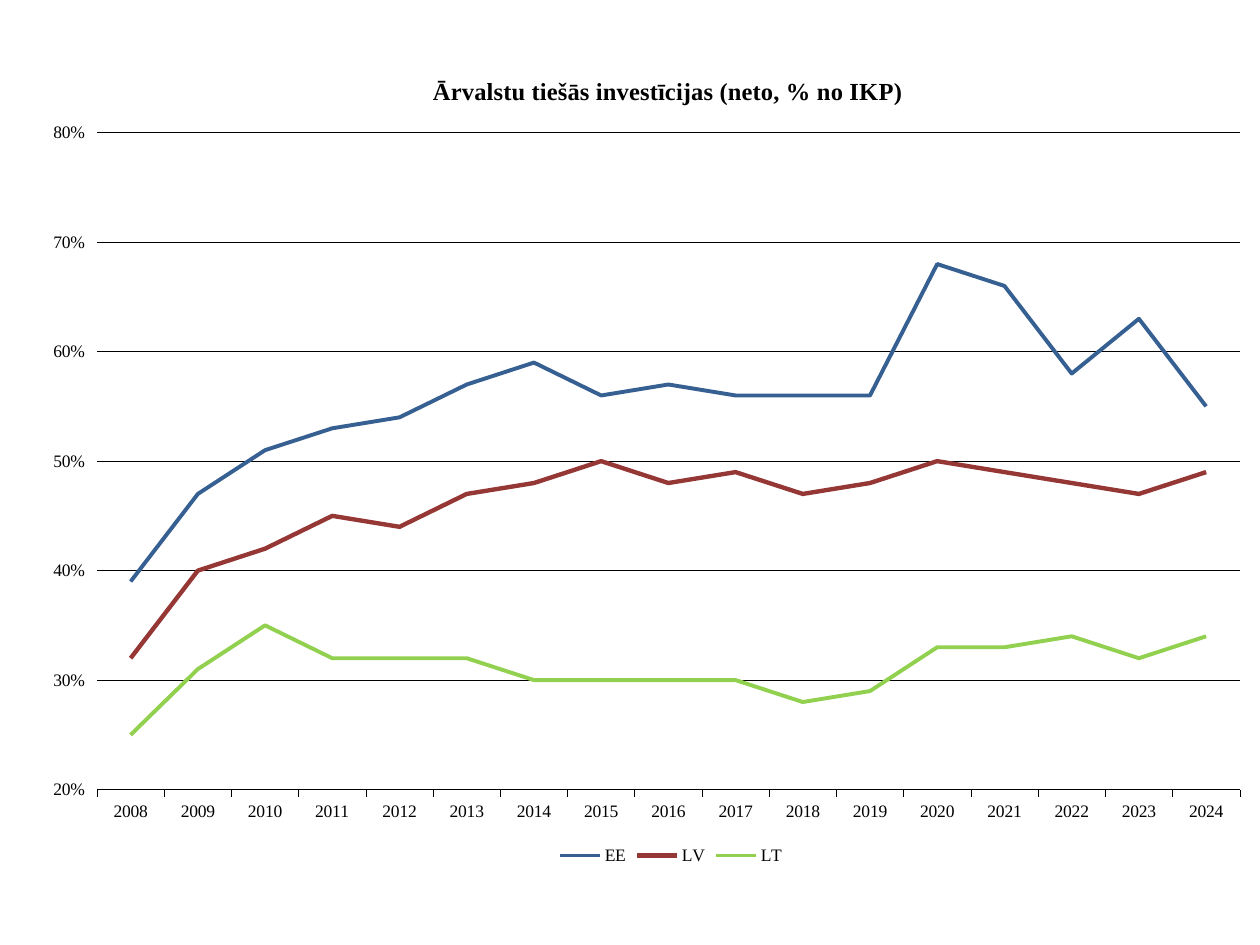
from dataclasses import dataclass

from pptx import Presentation
from pptx.chart.data import CategoryChartData
from pptx.dml.color import RGBColor
from pptx.enum.chart import (XL_CHART_TYPE, XL_LEGEND_POSITION, XL_MARKER_STYLE,
                             XL_TICK_LABEL_POSITION, XL_TICK_MARK)
from pptx.oxml import parse_xml
from pptx.oxml.ns import nsdecls, qn
from pptx.util import Pt

LINE = XL_CHART_TYPE.LINE
BOTTOM = XL_LEGEND_POSITION.BOTTOM
BARE = XL_MARKER_STYLE.NONE
LOW = XL_TICK_LABEL_POSITION.LOW
OUT = XL_TICK_MARK.OUTSIDE
NONE = XL_TICK_MARK.NONE


@dataclass(frozen=True)
class Theme:
    font: str = "Times New Roman"
    ink: str = "000000"
    blue: str = "376092"
    red: str = "953735"
    green: str = "92D050"
    body: int = 10
    head: int = 14
    hair: float = 0.25


theme = Theme()
PX = 914400 / 126
WIDE, HIGH = 1260, 945
LEFT, TOP, WIDTH, HEIGHT = [round(n * PX) for n in (0, 54, 1260, 837)]

YEARS = [str(year) for year in range(2008, 2025)]
LINES = [
    ("EE", theme.blue, 2.25, [0.39, 0.47, 0.51, 0.53, 0.54, 0.57, 0.59, 0.56, 0.57,
                              0.56, 0.56, 0.56, 0.68, 0.66, 0.58, 0.63, 0.55]),
    ("LV", theme.red, 2.5, [0.32, 0.40, 0.42, 0.45, 0.44, 0.47, 0.48, 0.50, 0.48,
                            0.49, 0.47, 0.48, 0.50, 0.49, 0.48, 0.47, 0.49]),
    ("LT", theme.green, 2.25, [0.25, 0.31, 0.35, 0.32, 0.32, 0.32, 0.30, 0.30, 0.30,
                               0.30, 0.28, 0.29, 0.33, 0.33, 0.34, 0.32, 0.34]),
]


def write(frame, text, size=theme.body, bold=False, color=theme.ink):
    run = frame.paragraphs[0].add_run()
    run.text = text
    run.font.name = theme.font
    run.font.size = Pt(size)
    run.font.bold = bold
    run.font.color.rgb = RGBColor.from_string(color)


def place(host, index, inner=False, **box):
    """Fix a chart part at shares of the chart area; index is the layout's child slot."""
    for old in host.findall(qn("c:layout")):
        host.remove(old)
    rows = '<c:layoutTarget val="inner"/>' if inner else ""
    rows += "".join(f'<c:{key}Mode val="edge"/>' for key in "xy")
    rows += "".join(f'<c:{key} val="{share}"/>' for key, share in box.items())
    host.insert(index, parse_xml(
        f'<c:layout {nsdecls("c")}><c:manualLayout>{rows}</c:manualLayout></c:layout>'))


deck = Presentation()
deck.slide_width = round(WIDE * PX)
deck.slide_height = round(HIGH * PX)
slide = deck.slides.add_slide(deck.slide_layouts[6])

# Chart and lines
data = CategoryChartData(number_format="0%")
data.categories = YEARS
for name, color, width, shares in LINES:
    data.add_series(name, shares)
chart = slide.shapes.add_chart(LINE, LEFT, TOP, WIDTH, HEIGHT, data).chart
chart.font.name = theme.font
chart.font.size = Pt(theme.body)
chart.font.color.rgb = RGBColor.from_string(theme.ink)

plot = chart.plots[0]
plot.vary_by_categories = False
for series, (name, color, width, shares) in zip(plot.series, LINES):
    series.smooth = False
    series.marker.style = BARE
    series.format.line.color.rgb = RGBColor.from_string(color)
    series.format.line.width = Pt(width)

# Axes
years, scale = chart.category_axis, chart.value_axis
for axis in (years, scale):
    axis.tick_label_position = LOW
    axis.major_tick_mark = OUT
    axis.minor_tick_mark = NONE
scale.minimum_scale, scale.maximum_scale, scale.major_unit = 0.2, 0.8, 0.1
scale.tick_labels.number_format = "0%"
scale.tick_labels.number_format_is_linked = False
scale.format.line.fill.background()
for rule in (years.format.line, scale.major_gridlines.format.line):
    rule.color.rgb = RGBColor.from_string(theme.ink)
    rule.width = Pt(theme.hair)

# Title, legend and plot area
chart.has_title = True
title = chart.chart_title
write(title.text_frame, "Ārvalstu tiešās investīcijas (neto, % no IKP)",
      size=theme.head, bold=True)
title.include_text_in_layout = False
chart.has_legend = True
legend = chart.legend
legend.position = BOTTOM
legend.include_in_layout = False

area = chart.element.find(qn("c:chart")).find(qn("c:plotArea"))
place(area, 0, inner=True, x=0.077, y=0.094, w=0.907, h=0.785)
place(title.element if hasattr(title, "element") else
      chart.element.find(qn("c:chart")).find(qn("c:title")), 1, x=0.34, y=0.02)
place(chart.element.find(qn("c:chart")).find(qn("c:legend")), 1, x=0.44, y=0.94)

deck.save("out.pptx")
